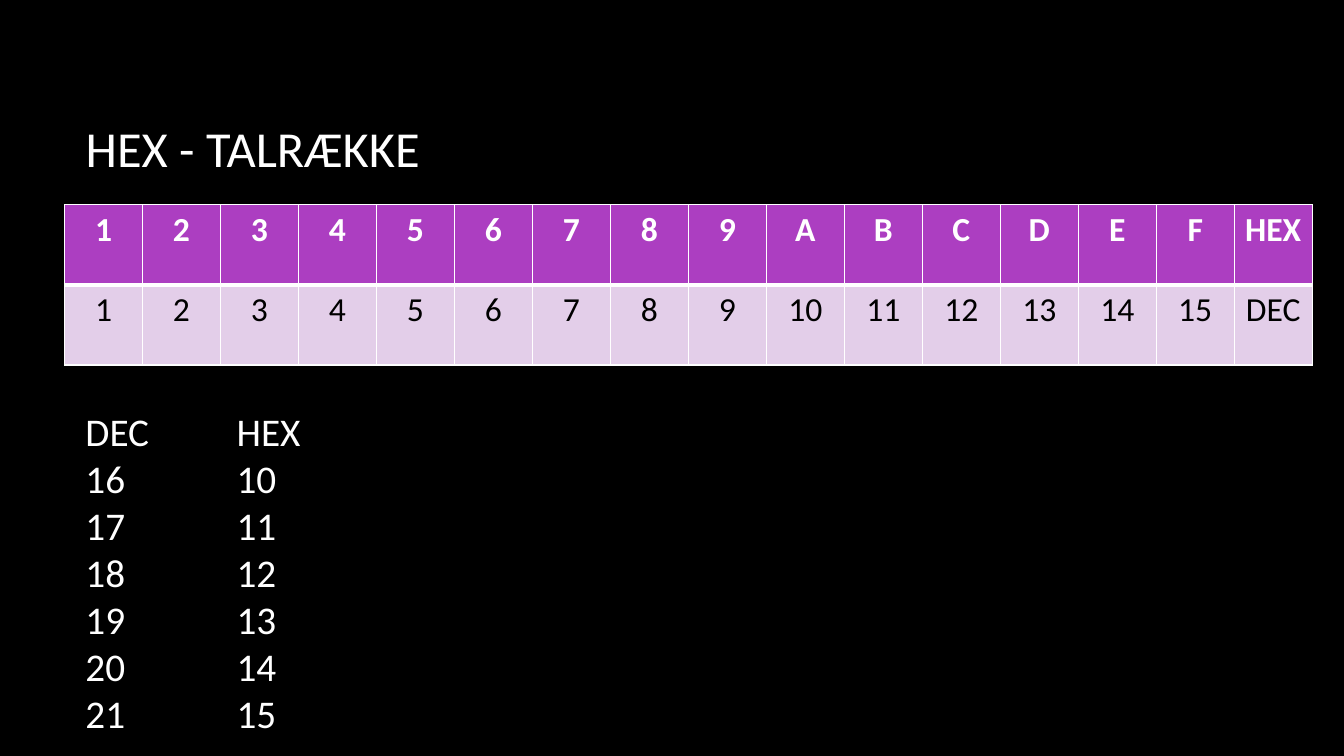
from dataclasses import dataclass

from lxml.etree import SubElement
from pptx import Presentation
from pptx.dml.color import RGBColor
from pptx.enum.text import MSO_ANCHOR, MSO_AUTO_SIZE, PP_ALIGN
from pptx.oxml.ns import qn
from pptx.util import Pt


@dataclass(frozen=True)
class Theme:
    font: str = "Calibri"
    background: str = "000000"
    light: str = "FFFFFF"
    dark: str = "000000"
    header: str = "AC3EC1"
    body: str = "E3CEE9"
    title_size: int = 36
    table_size: int = 24
    list_size: int = 28


THEME = Theme()
HEX_DIGITS = [*"123456789ABCDEF", "HEX"]
DECIMALS = [*map(str, range(1, 16)), "DEC"]
CONVERSIONS = [("DEC", "HEX")] + [(str(n), f"{n:X}") for n in range(16, 22)]


def style_font(para, size, color, bold=False):
    values = {"name": THEME.font, "size": Pt(size), "bold": bold}
    for name, value in values.items():
        setattr(para.font, name, value)
    para.font.color.rgb = RGBColor.from_string(color)


def set_frame(frame, anchor):
    values = {"word_wrap": True, "auto_size": MSO_AUTO_SIZE.NONE,
              "vertical_anchor": anchor}
    for name, value in values.items():
        setattr(frame, name, value)


def add_title(page, text, left, top, width, height):
    title = page.shapes.title
    bounds = {"left": left, "top": top, "width": width, "height": height}
    for name, value in bounds.items():
        setattr(title, name, Pt(value))
    set_frame(title.text_frame, MSO_ANCHOR.MIDDLE)
    para = title.text_frame.paragraphs[0]
    para.text = text
    para.alignment = PP_ALIGN.LEFT
    style_font(para, THEME.title_size, THEME.light)


def set_borders(cell, widths):
    """Draw light borders; widths maps the sides L, R, T, B, in that order."""
    properties = cell._tc.get_or_add_tcPr()
    for side, width in widths.items():
        line = SubElement(properties, qn(f"a:ln{side}"), w=str(Pt(width)))
        fill = SubElement(line, qn("a:solidFill"))
        SubElement(fill, qn("a:srgbClr"), val=THEME.light)


def style_cell(cell, text, fill, color, bold, borders):
    set_borders(cell, borders)
    cell.fill.solid()
    cell.fill.fore_color.rgb = RGBColor.from_string(fill)
    para = cell.text_frame.paragraphs[0]
    para.text = text
    para.alignment = PP_ALIGN.CENTER
    style_font(para, THEME.table_size, color, bold)


def add_digit_table(page, left, top, column_width, row_height):
    count = len(HEX_DIGITS)
    table = page.shapes.add_table(
        2, count, Pt(left), Pt(top),
        Pt(column_width * count), Pt(row_height * 2)).table
    table.horz_banding = False
    for column in table.columns:
        column.width = Pt(column_width)
    thin = {"L": 1, "R": 1, "T": 1, "B": 1}
    rows = [
        (HEX_DIGITS, THEME.header, THEME.light, True, {**thin, "B": 3}),
        (DECIMALS, THEME.body, THEME.dark, False, {**thin, "T": 3}),
    ]
    for row, (texts, *look) in zip(table.rows, rows):
        row.height = Pt(row_height)
        for cell, text in zip(row.cells, texts):
            style_cell(cell, text, *look)


def add_tab_stop(para, position):
    stops = SubElement(para._p.get_or_add_pPr(), qn("a:tabLst"))
    SubElement(stops, qn("a:tab"), pos=str(Pt(position)), algn="l")


def add_conversion_list(page, left, top, width, height, tab):
    box = page.shapes.add_textbox(Pt(left), Pt(top), Pt(width), Pt(height))
    frame = box.text_frame
    set_frame(frame, MSO_ANCHOR.TOP)
    frame.text = "\n".join("\t".join(pair) for pair in CONVERSIONS)
    for para in frame.paragraphs:
        add_tab_stop(para, tab)
        style_font(para, THEME.list_size, THEME.light)


def main():
    deck = Presentation()
    deck.slide_width, deck.slide_height = Pt(960), Pt(540)
    page = deck.slides.add_slide(deck.slide_layouts.get_by_name("Title Only"))
    page.background.fill.solid()
    page.background.fill.fore_color.rgb = RGBColor.from_string(THEME.background)
    add_title(page, "HEX - TALRÆKKE", 54, 48.24, 797.76, 114.48)
    add_digit_table(page, 46.08, 146.16, 55.71, 57.3)
    add_conversion_list(page, 54, 287.28, 808.56, 252, tab=108)
    deck.save("out.pptx")


if __name__ == "__main__":
    main()
